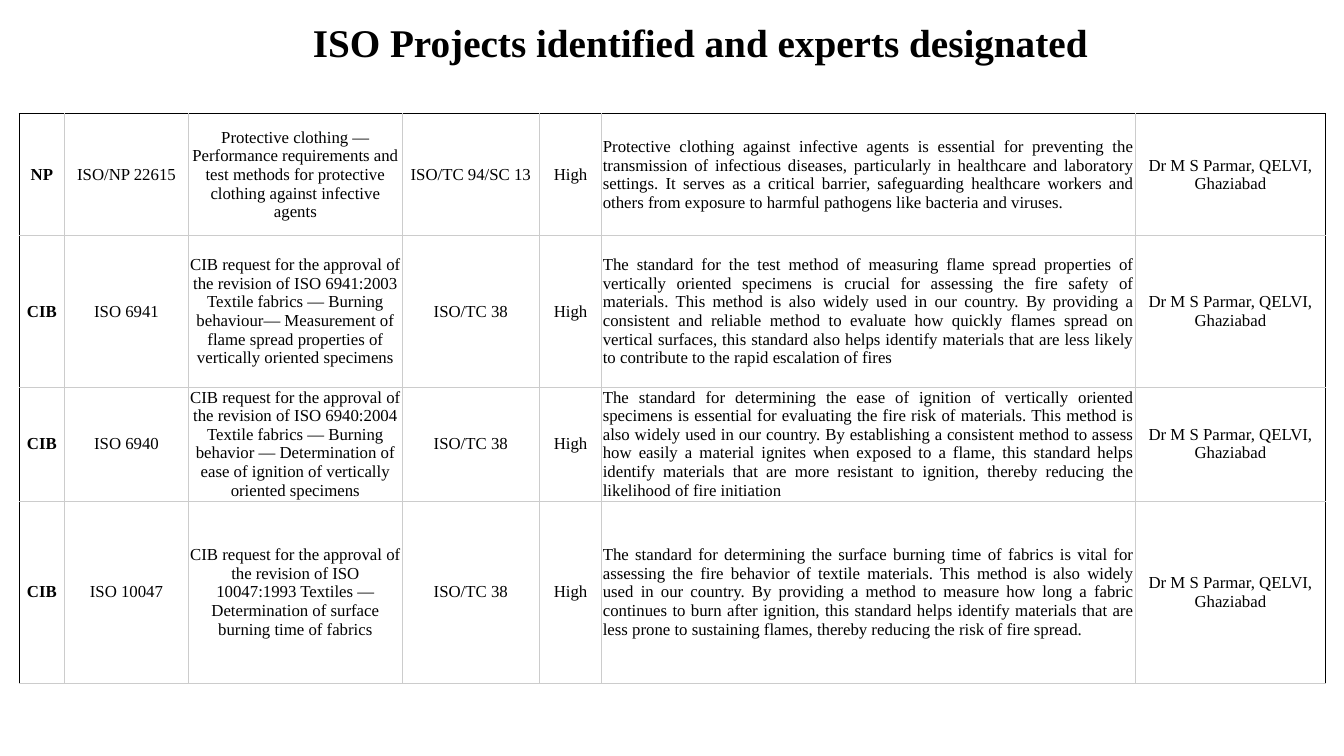
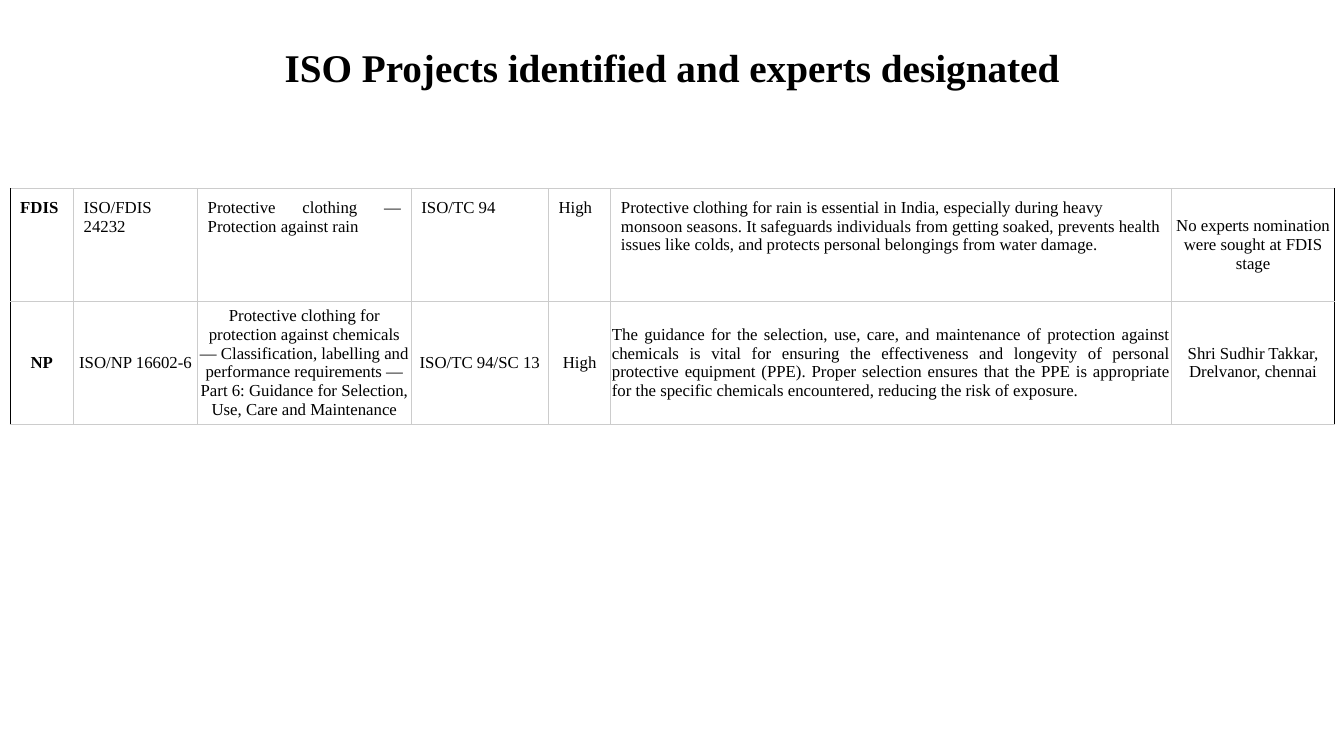
"""Build two slides listing ISO projects and the experts designated for them."""

import dataclasses

import pptx
import pptx.dml.color
import pptx.enum.text
import pptx.oxml
import pptx.oxml.ns
import pptx.presentation
import pptx.slide
import pptx.table
import pptx.text.text
import pptx.util

Align = pptx.enum.text.PP_ALIGN
Anchor = pptx.enum.text.MSO_ANCHOR

FONT = "Times New Roman"
INK = "000000"
GRID = "CCCCCC"
BORDER_POINTS = 0.75
TITLE = "ISO Projects identified and experts designated"
TITLE_SIZE = (7.93, 0.57)
MIDDLE_COLUMNS = (1.23, 2.12, 1.36, 0.62)
EXPERT = "Dr M S Parmar, QELVI, Ghaziabad"


@dataclasses.dataclass(frozen=True)
class CellStyle:
    align: Align = Align.CENTER
    anchor: Anchor = Anchor.MIDDLE
    margin_x: float = 0.01
    margin_y: float = 0.01


CENTRED = CellStyle()
JUSTIFIED = CellStyle(Align.JUSTIFY)
NOTE = CellStyle(margin_x=0.03, margin_y=0.02)
TOP_LEFT = CellStyle(Align.LEFT, Anchor.TOP, 0.1, 0.1)
TOP_JUSTIFIED = CellStyle(Align.JUSTIFY, Anchor.TOP, 0.1, 0.1)

COMPACT = (CENTRED,) * 5 + (JUSTIFIED, CENTRED)
ROOMY = (TOP_LEFT,) + (TOP_JUSTIFIED,) * 3 + (TOP_LEFT, TOP_LEFT, NOTE)


@dataclasses.dataclass(frozen=True)
class Project:
    height: float
    texts: tuple[str, ...]
    styles: tuple[CellStyle, ...] = COMPACT


@dataclasses.dataclass(frozen=True)
class ProjectPage:
    title_at: tuple[float, float]
    table_at: tuple[float, float]
    columns: tuple[float, ...]
    top_border: str
    projects: tuple[Project, ...]


PAGES = (
    ProjectPage(
        title_at=(2.98, 0.13),
        table_at=(0.19, 1.13),
        columns=(0.45, *MIDDLE_COLUMNS, 5.29, 1.89),
        top_border=INK,
        projects=(
            Project(1.21, (
                "NP",
                "ISO/NP 22615",
                "Protective clothing — Performance requirements and test methods "
                "for protective clothing against infective agents",
                "ISO/TC 94/SC 13",
                "High",
                "Protective clothing against infective agents is essential for "
                "preventing the transmission of infectious diseases, particularly in "
                "healthcare and laboratory settings. It serves as a critical barrier, "
                "safeguarding healthcare workers and others from exposure to harmful "
                "pathogens like bacteria and viruses.",
                EXPERT,
            )),
            Project(1.5, (
                "CIB",
                "ISO 6941",
                "CIB request for the approval of the revision of ISO 6941:2003 "
                "Textile fabrics — Burning behaviour— Measurement of flame spread "
                "properties of vertically oriented specimens",
                "ISO/TC 38",
                "High",
                "The standard for the test method of measuring flame spread "
                "properties of vertically oriented specimens is crucial for assessing "
                "the fire safety of materials. This method is also widely used in our "
                "country. By providing a consistent and reliable method to evaluate "
                "how quickly flames spread on vertical surfaces, this standard also "
                "helps identify materials that are less likely to contribute to the "
                "rapid escalation of fires",
                EXPERT,
            )),
            Project(1.12, (
                "CIB",
                "ISO 6940",
                "CIB request for the approval of the revision of ISO 6940:2004 "
                "Textile fabrics — Burning behavior — Determination of ease of "
                "ignition of vertically oriented specimens",
                "ISO/TC 38",
                "High",
                "The standard for determining the ease of ignition of vertically "
                "oriented specimens is essential for evaluating the fire risk of "
                "materials. This method is also widely used in our country. By "
                "establishing a consistent method to assess how easily a material "
                "ignites when exposed to a flame, this standard helps identify "
                "materials that are more resistant to ignition, thereby reducing the "
                "likelihood of fire initiation",
                EXPERT,
            )),
            Project(1.81, (
                "CIB",
                "ISO 10047",
                "CIB request for the approval of the revision of ISO 10047:1993 "
                "Textiles — Determination of surface burning time of fabrics",
                "ISO/TC 38",
                "High",
                "The standard for determining the surface burning time of fabrics is "
                "vital for assessing the fire behavior of textile materials. This "
                "method is also widely used in our country. By providing a method to "
                "measure how long a fabric continues to burn after ignition, this "
                "standard helps identify materials that are less prone to sustaining "
                "flames, thereby reducing the risk of fire spread.",
                EXPERT,
            )),
        ),
    ),
    ProjectPage(
        title_at=(2.7, 0.38),
        table_at=(0.1, 1.87),
        columns=(0.63, *MIDDLE_COLUMNS, 5.56, 1.62),
        top_border=GRID,
        projects=(
            Project(1.12, (
                "FDIS",
                "ISO/FDIS 24232",
                "Protective clothing — Protection against rain",
                "ISO/TC 94",
                "High",
                "Protective clothing for rain is essential in India, especially "
                "during heavy monsoon seasons. It safeguards individuals from getting "
                "soaked, prevents health issues like colds, and protects personal "
                "belongings from water damage.",
                "No experts nomination were sought at FDIS stage",
            ), ROOMY),
            Project(1.12, (
                "NP",
                "ISO/NP 16602-6",
                "Protective clothing for protection against chemicals — "
                "Classification, labelling and performance requirements — Part 6: "
                "Guidance for Selection, Use, Care and Maintenance",
                "ISO/TC 94/SC 13",
                "High",
                "The guidance for the selection, use, care, and maintenance of "
                "protection against chemicals is vital for ensuring the effectiveness "
                "and longevity of personal protective equipment (PPE). Proper "
                "selection ensures that the PPE is appropriate for the specific "
                "chemicals encountered, reducing the risk of exposure.",
                "Shri Sudhir Takkar, Drelvanor, chennai",
            )),
        ),
    ),
)


def color(value: str) -> pptx.dml.color.RGBColor:
    return pptx.dml.color.RGBColor.from_string(value)


def inches(*lengths: float) -> list[pptx.util.Length]:
    return [pptx.util.Inches(length) for length in lengths]


def write(frame: pptx.text.text.TextFrame, text: str, size: float, bold: bool, align: Align) -> None:
    para = frame.paragraphs[0]
    para.add_run().text = text
    para.alignment = align
    para.font.name = FONT
    para.font.size = pptx.util.Pt(size)
    para.font.bold = bold
    para.font.color.rgb = color(INK)


def set_borders(cell: pptx.table._Cell, left: str, right: str, top: str, bottom: str) -> None:
    properties = cell._tc.get_or_add_tcPr()
    width = pptx.util.Pt(BORDER_POINTS)
    namespace = pptx.oxml.ns.nsdecls("a")
    for side, value in zip("LRTB", (left, right, top, bottom)):
        properties.append(pptx.oxml.parse_xml(
            f'<a:ln{side} {namespace} w="{width}"><a:solidFill>'
            f'<a:srgbClr val="{value}"/></a:solidFill></a:ln{side}>'
        ))


def fill_cell(cell: pptx.table._Cell, text: str, style: CellStyle, bold: bool) -> None:
    cell.margin_left = cell.margin_right = pptx.util.Inches(style.margin_x)
    cell.margin_top = cell.margin_bottom = pptx.util.Inches(style.margin_y)
    cell.vertical_anchor = style.anchor
    cell.fill.background()
    write(cell.text_frame, text, 12, bold, style.align)


def add_title(page: pptx.slide.Slide, at: tuple[float, float]) -> None:
    box = page.shapes.add_textbox(*inches(*at, *TITLE_SIZE))
    box.text_frame.word_wrap = True
    box.text_frame.auto_size = pptx.enum.text.MSO_AUTO_SIZE.SHAPE_TO_FIT_TEXT
    write(box.text_frame, TITLE, 28, True, Align.CENTER)


def add_projects(page: pptx.slide.Slide, content: ProjectPage) -> None:
    projects, columns = content.projects, content.columns
    size = (sum(columns), sum(project.height for project in projects))
    table = page.shapes.add_table(
        len(projects), len(columns), *inches(*content.table_at, *size)
    ).table
    table.first_row = table.horz_banding = False
    for column, width in zip(table.columns, columns):
        column.width = pptx.util.Inches(width)
    last = len(columns) - 1
    for row, project in enumerate(projects):
        table.rows[row].height = pptx.util.Inches(project.height)
        for column, (text, style) in enumerate(zip(project.texts, project.styles)):
            cell = table.cell(row, column)
            set_borders(
                cell,
                left=INK if column == 0 else GRID,
                right=INK if column == last else GRID,
                top=content.top_border if row == 0 else GRID,
                bottom=GRID,
            )
            fill_cell(cell, text, style, bold=column == 0)


def add_page(deck: pptx.presentation.Presentation, content: ProjectPage) -> None:
    page = deck.slides.add_slide(deck.slide_layouts[6])
    add_projects(page, content)
    add_title(page, content.title_at)


def main() -> None:
    deck = pptx.Presentation()
    deck.slide_width, deck.slide_height = inches(13.33, 7.5)
    for content in PAGES:
        add_page(deck, content)
    deck.save("out.pptx")


if __name__ == "__main__":
    main()
